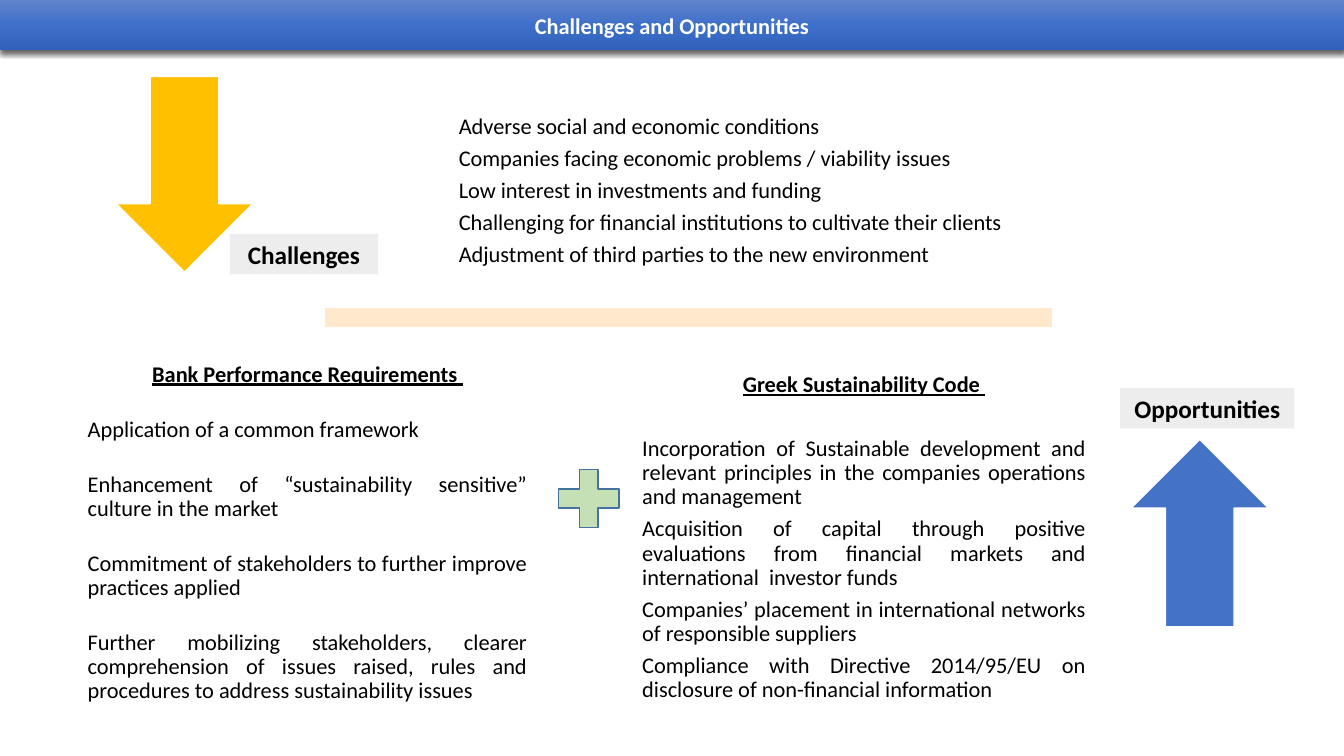
"""Build the slide Challenges and Opportunities."""
from copy import deepcopy

from pptx import Presentation
from pptx.dml.color import RGBColor
from pptx.enum.shapes import MSO_SHAPE
from pptx.enum.text import MSO_ANCHOR, PP_ALIGN
from pptx.oxml import parse_xml
from pptx.oxml.ns import nsdecls, qn
from pptx.util import Inches, Pt

RECT, MINUS, PLUS = MSO_SHAPE.RECTANGLE, MSO_SHAPE.MATH_MINUS, MSO_SHAPE.MATH_PLUS
DOWN, UP = MSO_SHAPE.DOWN_ARROW, MSO_SHAPE.UP_ARROW
LEFT, CENTER, JUSTIFY = PP_ALIGN.LEFT, PP_ALIGN.CENTER, PP_ALIGN.JUSTIFY
TOP, MIDDLE = MSO_ANCHOR.TOP, MSO_ANCHOR.MIDDLE

BLACK = RGBColor(0x00, 0x00, 0x00)
WHITE = RGBColor(0xFF, 0xFF, 0xFF)
PEACH = RGBColor(0xFF, 0xE8, 0xCC)
AMBER = RGBColor(0xFF, 0xC0, 0x00)
BLUE = RGBColor(0x44, 0x72, 0xC4)
GREEN = RGBColor(0xC5, 0xE0, 0xB4)
DARK_BLUE = RGBColor(0x43, 0x73, 0x9E)
GREY = RGBColor(0xED, 0xED, 0xED)
BAR_COLORS = [RGBColor(0x61, 0x83, 0xCB), RGBColor(0x3E, 0x70, 0xCA), RGBColor(0x30, 0x62, 0xBB)]

prs = Presentation()
prs.slide_width, prs.slide_height = Inches(13.33), Inches(7.5)
s = prs.slides.add_slide(prs.slide_layouts[6])


def add_box(kind, at, fill, line=None):
    """Add a preset shape without shadow."""
    sp = s.shapes.add_shape(kind, *map(Inches, at))
    sp.shadow.inherit = False
    sp.fill.solid()
    sp.fill.fore_color.rgb = fill
    if line is None:
        sp.line.fill.background()
    else:
        sp.line.color.rgb = line
        sp.line.width = Pt(1)
    return sp


def style(p, size, color=BLACK, bold=False, align=CENTER):
    """Set the font and alignment of a paragraph."""
    p.font.name, p.font.size, p.font.bold = "Calibri", Pt(size), bold
    p.font.color.rgb = color
    p.alignment = align


for kind, at, fill, line in [
    (MINUS, (1.91, 2.72, 9.83, 0.86), PEACH, WHITE),
    (DOWN, (1.15, 0.76, 1.36, 1.94), AMBER, WHITE),
    (UP, (11.22, 4.36, 1.36, 1.86), BLUE, WHITE),
    (PLUS, (5.43, 4.55, 0.82, 0.79), GREEN, DARK_BLUE),
]:
    add_box(kind, at, fill, line)

bar = add_box(RECT, (0, 0, 13.33, 0.5), BLUE)
bar.fill.gradient()
bar.fill.gradient_angle = 270
stops = bar._element.spPr.find(".//" + qn("a:gsLst"))
stops.insert(1, deepcopy(stops[0]))
for i, (stop, color) in enumerate(zip(bar.fill.gradient_stops, BAR_COLORS)):
    stop.position = i / 2
    stop.color.rgb = color
bar._element.spPr.find(qn("a:effectLst")).append(parse_xml(
    f'<a:outerShdw {nsdecls("a")} blurRad="57150" dist="19050" dir="5400000" rotWithShape="0">'
    '<a:srgbClr val="000000"><a:alpha val="63000"/></a:srgbClr></a:outerShdw>'))
tf = bar.text_frame
tf.vertical_anchor = MIDDLE
tf.text = "Challenges and Opportunities"
style(tf.paragraphs[0], 16, WHITE, True)

for label, at in [("Challenges", (2.28, 2.32, 1.47, 0.4)),
                  ("Opportunities", (11.11, 3.85, 1.73, 0.4))]:
    tf = add_box(RECT, at, GREY).text_frame
    tf.vertical_anchor = MIDDLE
    tf.text = label
    style(tf.paragraphs[0], 18, BLACK, True)

columns = [
    ((4.55, 1.14, 5.82, 1.6), None, 0, 5.6, LEFT, [
        "Adverse social and economic conditions",
        "Companies facing economic problems / viability issues",
        "Low interest in investments and funding",
        "Challenging for financial institutions to cultivate their clients",
        "Adjustment of third parties to the new environment"]),
    ((0.87, 3.6, 4.36, 3.45), "Bank Performance Requirements ", 22, 22, JUSTIFY, [
        "Application of a common framework",
        "Enhancement of “sustainability sensitive” culture in the market",
        "Commitment of stakeholders to further improve practices applied",
        "Further mobilizing stakeholders, clearer comprehension of issues raised, "
        "rules and procedures to address sustainability issues"]),
    ((6.37, 3.7, 4.4, 3.35), "Greek Sustainability Code ", 28.6, 5.6, JUSTIFY, [
        "Incorporation of Sustainable development and relevant principles "
        "in the companies operations and management",
        "Acquisition of capital through positive evaluations from financial markets "
        "and international  investor funds",
        "Companies’ placement in international networks of responsible suppliers",
        "Compliance with Directive 2014/95/EU on disclosure of non-financial information"]),
]
for at, heading, heading_gap, gap, align, points in columns:
    tf = s.shapes.add_textbox(*map(Inches, at)).text_frame
    tf.word_wrap = True
    tf.vertical_anchor = TOP
    tf.margin_left = tf.margin_right = tf.margin_top = tf.margin_bottom = 0
    tf.text = "\n".join([heading] + points if heading else points)
    for p in tf.paragraphs:
        style(p, 16, align=align)
        p.line_spacing = 0.9
        p.space_after = Pt(gap)
    if heading:
        p = tf.paragraphs[0]
        style(p, 16, bold=True)
        p.font.underline = True
        p.space_after = Pt(heading_gap)

prs.save("out.pptx")
